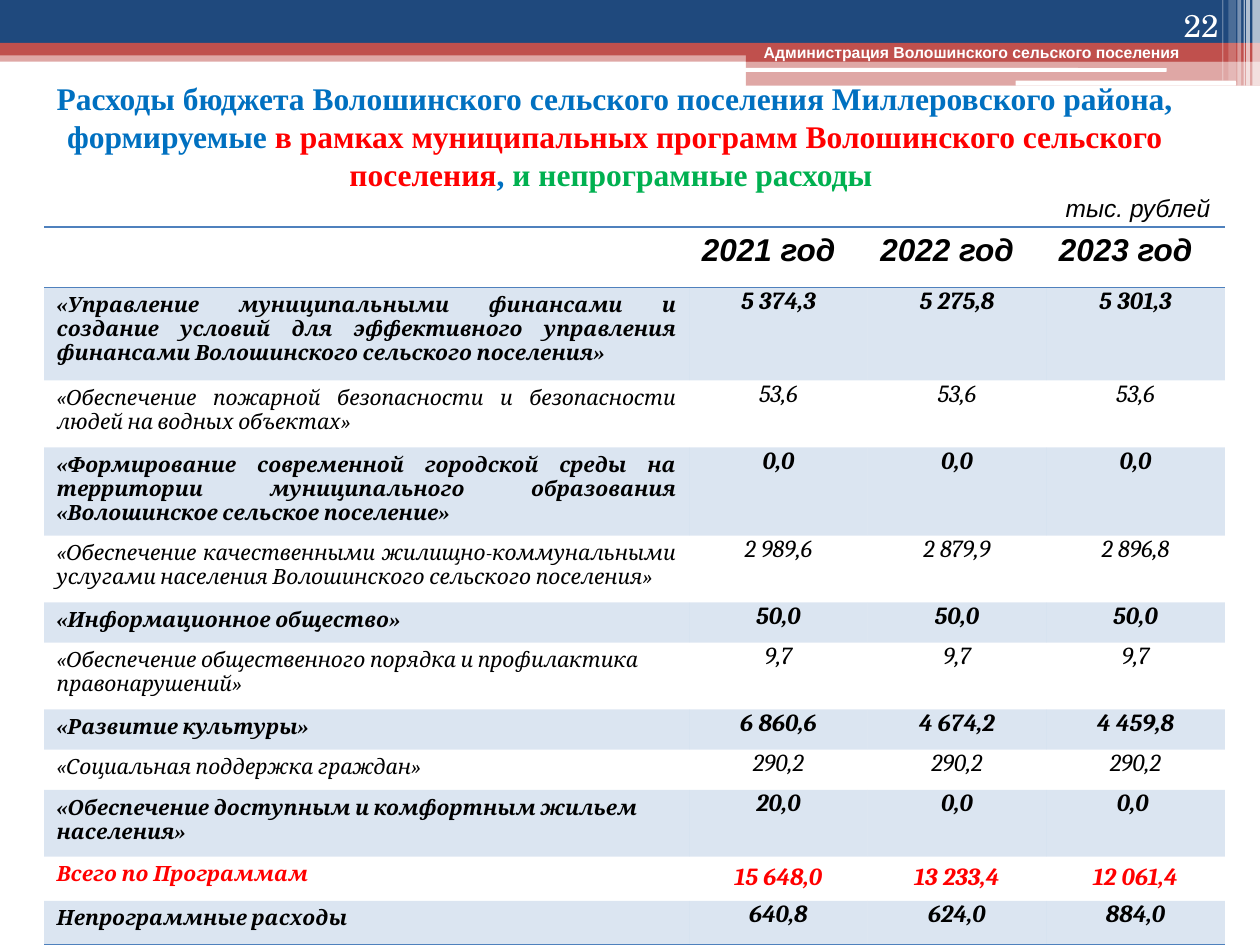
"""Builds the slide on municipal programme spending with its budget table."""
import pptx
import pptx.util
import pptx.dml.color
import pptx.enum.shapes
import pptx.enum.text
import pptx.oxml
import pptx.oxml.ns

COLORS = {"navy": "1F497D", "brick": "C0504D", "white": "FFFFFF", "black": "000000",
          "accent": "4F81BD", "blue": "0070C0", "red": "FF0000", "green": "00B050"}
ALIGN = pptx.enum.text.PP_ALIGN
ANCHOR = pptx.enum.text.MSO_ANCHOR
SHAPE = pptx.enum.shapes.MSO_SHAPE
qn = pptx.oxml.ns.qn

presentation = pptx.Presentation()
presentation.slide_width = pptx.util.Inches(10)
presentation.slide_height = pptx.util.Inches(7.5)
column = presentation.slide_width / 100
row = presentation.slide_height / 75
slide = presentation.slides.add_slide(presentation.slide_layouts[5])


def paint(fill, properties, color, opacity=100):
    fill.solid()
    fill.fore_color.rgb = pptx.dml.color.RGBColor.from_string(COLORS[color])
    if opacity < 100:
        alpha = properties.find(".//" + qn("a:srgbClr")).makeelement(qn("a:alpha"), {"val": str(opacity * 1000)})
        properties.find(".//" + qn("a:srgbClr")).append(alpha)


def style(paragraph, font_name, size, color, bold=False, italic=False, align=ALIGN.LEFT):
    paragraph.alignment = align
    font = paragraph.font
    font.name, font.size, font.bold, font.italic = font_name, pptx.util.Pt(size), bold, italic
    font.color.rgb = pptx.dml.color.RGBColor.from_string(COLORS[color])


bars = [
    (0, 4, 100, 0.9, "brick", 50), (0, 0, 100, 3.4, "navy", 100),
    (0, 3.4, 100, 1, "brick", 100), (59.2, 3.9, 40.8, 1, "brick", 100),
    (59.2, 4.8, 40.8, 2, "brick", 50),
    (59.1, 5.4, 33.5, 0.3, "white", 100), (80.6, 6.4, 17.5, 0.4, "white", 100),
    (99.4, 0, 0.6, 6.8, "white", 65), (98.9, 0, 0.3, 6.8, "white", 65),
    (98.7, 0, 0.1, 6.8, "white", 60), (98.2, 0, 0.3, 6.8, "white", 40),
    (97.5, 0, 0.6, 6.4, "white", 20), (97, 0, 0.1, 6.4, "white", 30),
]
for left, top, width, height, color, opacity in bars:
    rounded = color == "white" and width > height
    shape = slide.shapes.add_shape(SHAPE.ROUNDED_RECTANGLE if rounded else SHAPE.RECTANGLE,
                                   int(left * column), int(top * row), int(width * column), int(height * row))
    shape.shadow.inherit = False
    shape.line.fill.background()
    paint(shape.fill, shape._element.spPr, color, opacity)

title = slide.shapes.title
title.left, title.top = 0, int(6 * row)
title.width, title.height = int(97.6 * column), int(9.6 * row)
slide.shapes._spTree.append(title._element)
title.text_frame.word_wrap = True
title.text_frame.auto_size = pptx.enum.text.MSO_AUTO_SIZE.NONE
title.text_frame.vertical_anchor = ANCHOR.MIDDLE
paragraph = title.text_frame.paragraphs[0]
style(paragraph, "Times New Roman", 18, "blue", bold=True, align=ALIGN.CENTER)
for text, color in [
    ("Расходы бюджета Волошинского сельского поселения Миллеровского района, формируемые ", "blue"),
    ("в рамках муниципальных программ Волошинского сельского поселения", "red"),
    (", ", "blue"), ("и непрограмные расходы ", "green"),
]:
    run = paragraph.add_run()
    run.text = text
    run.font.color.rgb = pptx.dml.color.RGBColor.from_string(COLORS[color])

labels = [
    ((89.4, 0, 8.3, 4), "22", ANCHOR.BOTTOM, ("TeX Gyre Schola", 18, "white", False, False, ALIGN.RIGHT)),
    ((83.6, 14.8, 14.2, 3.4), "тыс. рублей", ANCHOR.TOP, ("Arial", 14, "black", False, True)),
    ((57, 2.9, 40.2, 2.5), "Администрация Волошинского сельского поселения", ANCHOR.TOP,
     ("Arial", 9, "white", True, False, ALIGN.CENTER)),
]
for (left, top, width, height), text, anchor, look in labels:
    box = slide.shapes.add_textbox(int(left * column), int(top * row), int(width * column), int(height * row))
    box.text_frame.word_wrap = True
    box.text_frame.vertical_anchor = anchor
    box.text_frame.text = text
    style(box.text_frame.paragraphs[0], *look)

budget = [
    (4.8, "", "2021 год", "2022 год", "2023 год"),
    (7.4, "«Управление муниципальными финансами и создание условий для эффективного управления "
     "финансами Волошинского сельского поселения»", "5 374,3", "5 275,8", "5 301,3"),
    (5.3, "«Обеспечение пожарной безопасности и безопасности людей на водных объектах»",
     "53,6", "53,6", "53,6"),
    (6.8, "«Формирование современной городской среды на территории муниципального образования "
     "«Волошинское сельское поселение»", "0,0", "0,0", "0,0"),
    (5.3, "«Обеспечение качественными жилищно-коммунальными услугами населения Волошинского "
     "сельского поселения»", "2 989,6", "2 879,9", "2 896,8"),
    (3.2, "«Информационное общество»", "50,0", "50,0", "50,0"),
    (5.3, "«Обеспечение общественного порядка и профилактика правонарушений»", "9,7", "9,7", "9,7"),
    (3.2, "«Развитие культуры»", "6 860,6", "4 674,2", "4 459,8"),
    (3.2, "«Социальная поддержка граждан»", "290,2", "290,2", "290,2"),
    (5.3, "«Обеспечение доступным и комфортным жильем населения»", "20,0", "0,0", "0,0 "),
    (3.5, "Всего по Программам", "15 648,0", "13 233,4", "12 061,4"),
    (3.5, "Непрограммные расходы", "640,8", "624,0", "884,0"),
]
last = len(budget) - 1
total = last - 1
table_height = sum(line[0] for line in budget)
table = slide.shapes.add_table(len(budget), 4, int(3.5 * column), int(18 * row),
                               int(93.7 * column), int(table_height * row)).table
table._tbl.tblPr.find(qn("a:tableStyleId")).text = "{2D5ABB26-0587-4C30-8999-92F81FD0307C}"
for table_column, width in zip(table.columns, (51.2, 14.17, 14.17, 14.17)):
    table_column.width = int(width * column)

for i, (height, *texts) in enumerate(budget):
    table.rows[i].height = int(height * row)
    shaded = i % 2 == 1
    for j, text in enumerate(texts):
        cell = table.cell(i, j)
        cell.text = text
        paragraph = cell.text_frame.paragraphs[0]
        color = "red" if i == total else "black"
        bold = shaded or i == total
        if i == 0:
            style(paragraph, "Arial", 18, color, True, True)
        elif j == 0:
            style(paragraph, "Cambria", 12, color, bold, True, ALIGN.JUSTIFY if i <= 4 else ALIGN.LEFT)
        else:
            style(paragraph, "Cambria", 14, color, bold, True, ALIGN.CENTER)
            if i != total:
                cell.margin_left = cell.margin_right = int(0.7 * column)
                cell.margin_top = cell.margin_bottom = 0
        properties = cell._tc.get_or_add_tcPr()
        if shaded:
            paint(cell.fill, properties, "accent", 20)
        else:
            cell.fill.background()
        sides = {0: ("lnT", "lnB"), last: ("lnB",)}.get(i, ())
        for position, side in enumerate(sides):
            properties.insert(position, pptx.oxml.parse_xml(
                f'<a:{side} xmlns:a="http://schemas.openxmlformats.org/drawingml/2006/main" w="12700">'
                f'<a:solidFill><a:srgbClr val="{COLORS["accent"]}"/></a:solidFill></a:{side}>'))

presentation.save("out.pptx")
